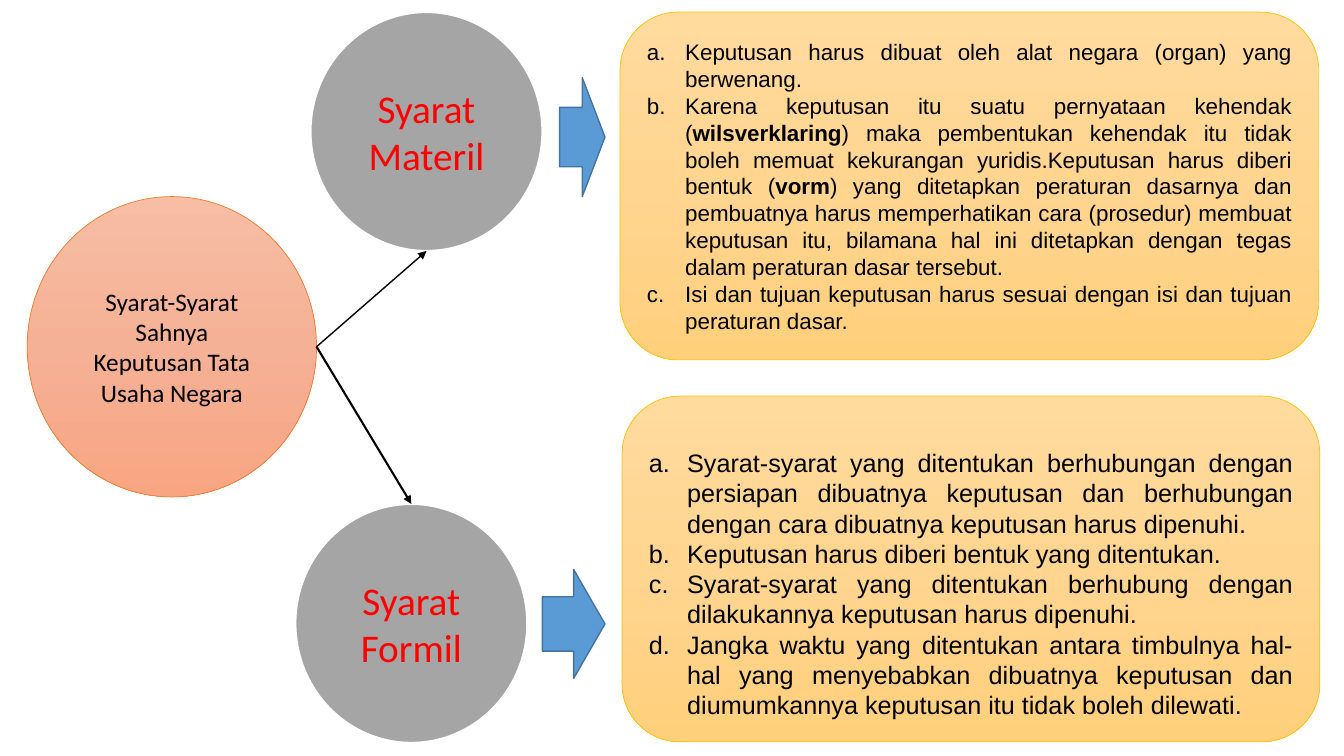
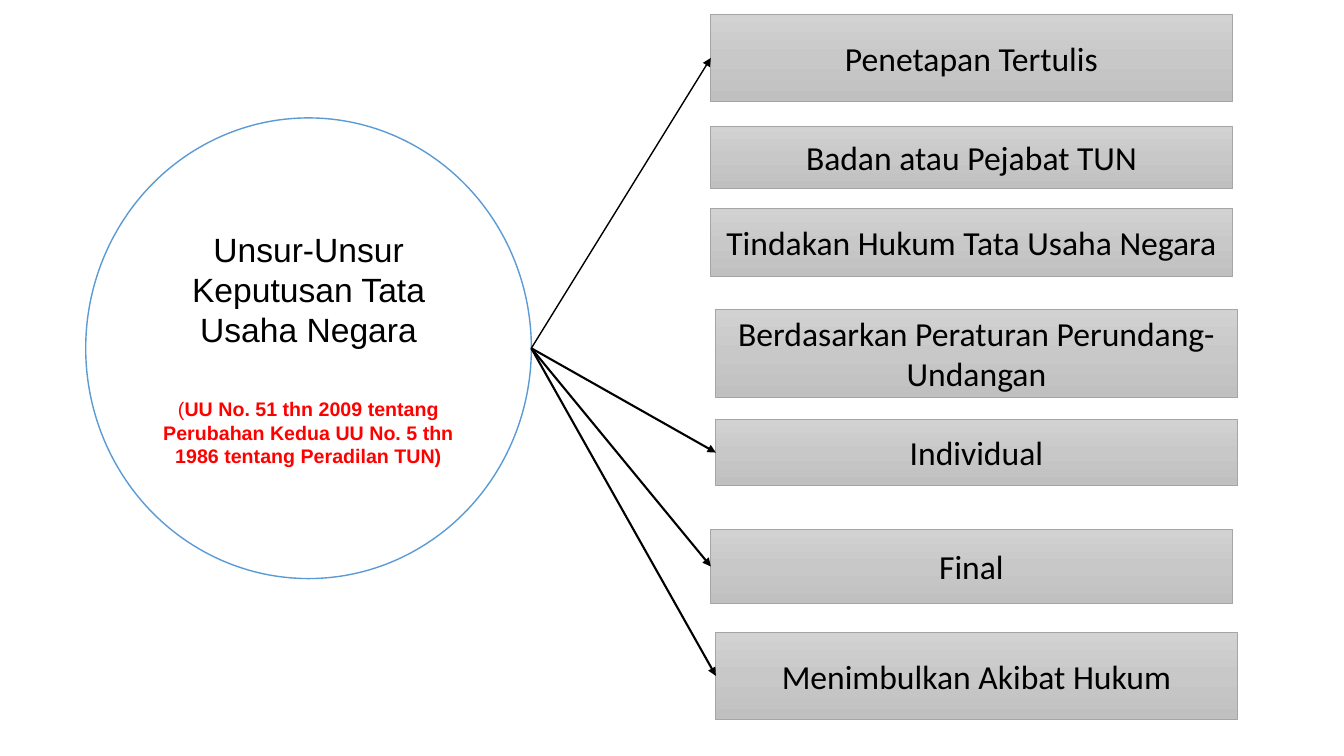
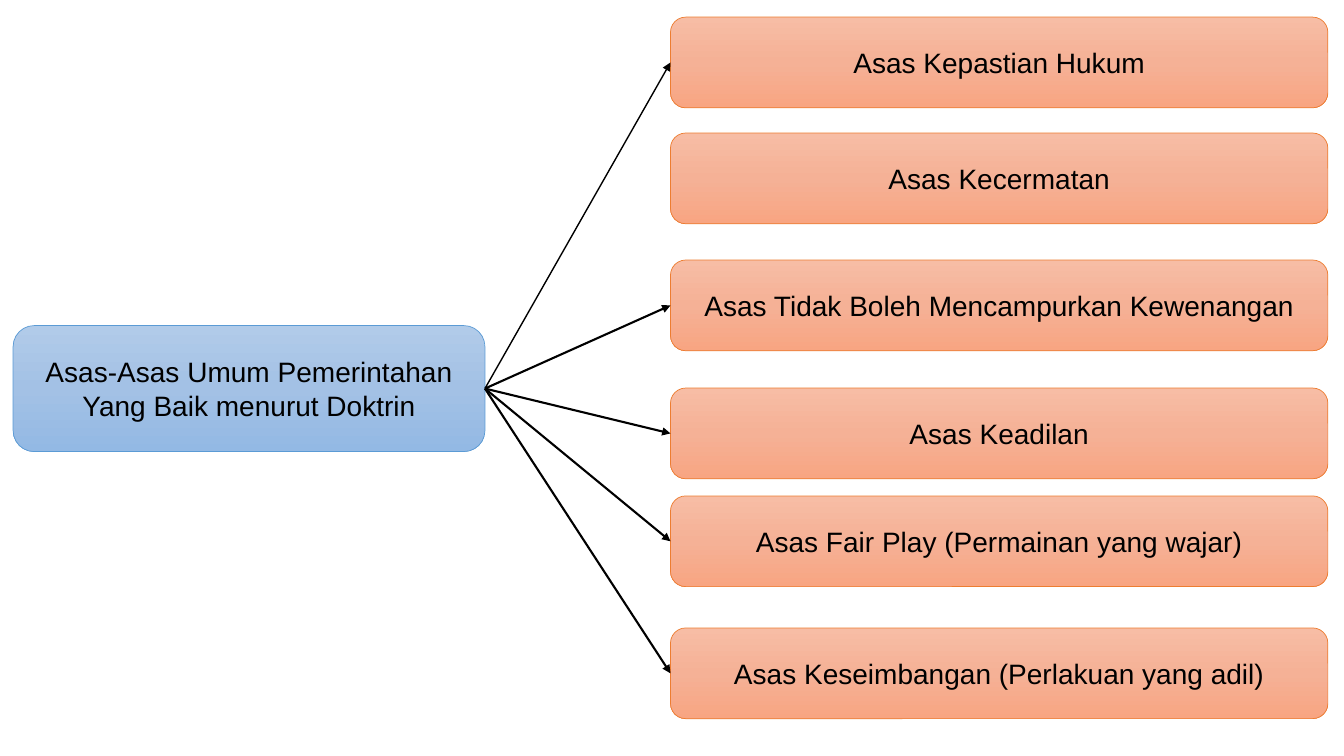
from copy import deepcopy
from dataclasses import dataclass

from pptx import Presentation
from pptx.dml.color import RGBColor
from pptx.enum.shapes import MSO_CONNECTOR, MSO_SHAPE as Preset
from pptx.enum.text import MSO_ANCHOR, PP_ALIGN as Align
from pptx.oxml.ns import qn
from pptx.oxml.xmlchemy import OxmlElement
from pptx.util import Inches, Pt


@dataclass(frozen=True)
class Skin:
    """Fill (one colour, or several for a downward gradient) and outline."""
    fill: tuple
    line: str
    weight: float = 0.5


@dataclass(frozen=True)
class Font:
    name: str
    size: int
    color: str = "000000"


class Theme:
    peach = Skin(("F7BDA5", "F5B196", "F8A582"), "ED7D31")
    gold = Skin(("FFDB9E", "FFD590", "FFD07C"), "FFC000")
    silver = Skin(("D2D2D2", "C8C8C8", "C0C0C0"), "A5A5A5")
    sky = Skin(("B1CBE9", "A3C1E5", "93B9E4"), "5B9BD5")
    gray = Skin(("A5A5A5",), "FFFFFF", 1.5)
    blue = Skin(("5B9BD5",), "43739E", 1)
    outline = Skin(("FFFFFF",), "5B9BD5", 1)

    ink = "000000"
    topic = Font("Calibri", 18)
    branch = Font("Calibri", 28, "FF0000")
    element = Font("Calibri", 24)
    heading = Font("Arial", 24)
    law = Font("Arial", 14, "FF0000")
    principle = Font("Arial", 20)
    material = Font("Arial", 16)
    formal = Font("Arial", 18)

    indent = Inches(0.38)
    thin, thick = Pt(1), Pt(1.5)


LEFT, RIGHT = 1, 3

BRANCHES = [
    dict(label="Syarat Materil", circle=(3.08, 0.12), arrow=(5.55, 0.77, 0.45, 1.18),
         panel=(6.15, 0.12, 6.93, 3.45), font=Theme.material, drop=0, weight=Theme.thin,
         rules=[
             "Keputusan harus dibuat oleh alat negara (organ) yang berwenang.",
             "Karena keputusan itu suatu pernyataan kehendak (*wilsverklaring*) maka "
             "pembentukan kehendak itu tidak boleh memuat kekurangan yuridis.Keputusan "
             "harus diberi bentuk (*vorm*) yang ditetapkan peraturan dasarnya dan "
             "pembuatnya harus memperhatikan cara (prosedur) membuat keputusan itu, "
             "bilamana hal ini ditetapkan dengan tegas dalam peraturan dasar tersebut.",
             "Isi dan tujuan keputusan harus sesuai dengan isi dan tujuan peraturan dasar.",
         ]),
    dict(label="Syarat Formil", circle=(2.93, 5), arrow=(5.38, 5.65, 0.62, 1.08),
         panel=(6.17, 3.93, 6.92, 3.43), font=Theme.formal, drop=0.29, weight=Theme.thick,
         rules=[
             "Syarat-syarat yang ditentukan berhubungan dengan persiapan dibuatnya "
             "keputusan dan berhubungan dengan cara dibuatnya keputusan harus dipenuhi.",
             "Keputusan harus diberi bentuk yang ditentukan.",
             "Syarat-syarat yang ditentukan berhubung dengan dilakukannya keputusan "
             "harus dipenuhi.",
             "Jangka waktu yang ditentukan antara timbulnya hal-hal yang menyebabkan "
             "dibuatnya keputusan dan diumumkannya keputusan itu tidak boleh dilewati.",
         ]),
]

# label, left, top, height, weight of the arrow from the hub (None: no arrow)
ELEMENTS = [
    ("Penetapan Tertulis", 7.05, 0.14, 0.87, Theme.thin),
    ("Badan atau Pejabat TUN", 7.05, 1.25, 0.62, None),
    ("Tindakan Hukum Tata Usaha Negara", 7.05, 2.07, 0.67, None),
    ("Berdasarkan Peraturan Perundang-Undangan", 7.1, 3.07, 0.87, None),
    ("Individual", 7.1, 4.16, 0.66, Theme.thick),
    ("Final", 7.05, 5.25, 0.74, Theme.thick),
    ("Menimbulkan Akibat Hukum", 7.1, 6.27, 0.87, Theme.thick),
]

# label, top, weight of the arrow from the hub
PRINCIPLES = [
    ("Asas Kepastian Hukum", 0.17, Theme.thin),
    ("Asas Kecermatan", 1.32, None),
    ("Asas Tidak Boleh Mencampurkan Kewenangan", 2.58, Theme.thick),
    ("Asas Keadilan", 3.85, Theme.thick),
    ("Asas Fair Play (Permainan yang wajar)", 4.92, Theme.thick),
    ("Asas Keseimbangan (Perlakuan yang adil)", 6.23, Theme.thick),
]


def rgb(value):
    return RGBColor.from_string(value)


def paint(shape, skin):
    shape.shadow.inherit = False
    shape.line.color.rgb = rgb(skin.line)
    shape.line.width = Pt(skin.weight)
    if len(skin.fill) == 1:
        shape.fill.solid()
        shape.fill.fore_color.rgb = rgb(skin.fill[0])
        return
    shape.fill.gradient()
    shape.fill.gradient_angle = 270
    first_stop = next(shape._element.iter(qn("a:gs")))
    first_stop.addnext(deepcopy(first_stop))
    last = len(skin.fill) - 1
    for i, (stop, color) in enumerate(zip(shape.fill.gradient_stops, skin.fill)):
        stop.position = i / last
        stop.color.rgb = rgb(color)


def add_figure(slide, preset, box, skin):
    figure = slide.shapes.add_shape(preset, *map(Inches, box))
    paint(figure, skin)
    frame = figure.text_frame
    frame.word_wrap = True
    frame.vertical_anchor = MSO_ANCHOR.MIDDLE
    return figure


def write(paragraph, text, font, align=Align.CENTER):
    """Fill a paragraph; stretches between asterisks are bold."""
    paragraph.alignment = align
    for i, part in enumerate(text.split("*")):
        if part:
            run = paragraph.add_run()
            run.text = part
            run.font.name = font.name
            run.font.size = Pt(font.size)
            run.font.color.rgb = rgb(font.color)
            run.font.bold = i % 2 == 1


def add_label(slide, preset, box, skin, text, font):
    figure = add_figure(slide, preset, box, skin)
    write(figure.text_frame.paragraphs[0], text, font)
    return figure


def letter(paragraph):
    """Number the paragraph a., b., c. with a hanging indent."""
    props = paragraph._p.get_or_add_pPr()
    props.set("marL", str(Theme.indent))
    props.set("indent", str(-Theme.indent))
    numbering = OxmlElement("a:buAutoNum")
    numbering.set("type", "alphaLcPeriod")
    props.append(numbering)


def add_rules(slide, box, rules, font, drop):
    """Panel with a lettered list, pushed down by drop inches of extra top margin."""
    frame = add_figure(slide, Preset.ROUNDED_RECTANGLE, box, Theme.gold).text_frame
    frame.margin_top += Inches(drop)
    for i, rule in enumerate(rules):
        paragraph = frame.add_paragraph() if i else frame.paragraphs[0]
        write(paragraph, rule, font, Align.JUSTIFY)
        letter(paragraph)


def link(slide, hub, target, weight):
    """Arrow from the hub's right to a box's left, or to the facing edge of a circle."""
    start_x, start_y = hub.left + hub.width, hub.top + hub.height // 2
    end_x = target.left + target.width // 2
    end_y = target.top if target.top > start_y else target.top + target.height
    arrow = slide.shapes.add_connector(MSO_CONNECTOR.STRAIGHT,
                                       start_x, start_y, end_x, end_y)
    if hub.auto_shape_type != Preset.OVAL:
        arrow.begin_connect(hub, RIGHT)
    if target.auto_shape_type != Preset.OVAL:
        arrow.end_connect(target, LEFT)
    arrow.line.color.rgb = rgb(Theme.ink)
    arrow.line.width = weight
    head = OxmlElement("a:tailEnd")
    head.set("type", "triangle")
    arrow.line._get_or_add_ln().append(head)
    arrow._element.spPr.append(OxmlElement("a:effectLst"))


def build_conditions(slide):
    hub = add_label(slide, Preset.OVAL, (0.27, 1.95, 2.87, 2.98), Theme.peach,
                    "Syarat-Syarat Sahnya Keputusan Tata Usaha Negara", Theme.topic)
    for branch in BRANCHES:
        circle = add_label(slide, Preset.OVAL, (*branch["circle"], 2.3, 2.37),
                           Theme.gray, branch["label"], Theme.branch)
        add_rules(slide, branch["panel"], branch["rules"], branch["font"], branch["drop"])
        link(slide, hub, circle, branch["weight"])
        add_figure(slide, Preset.RIGHT_ARROW, branch["arrow"], Theme.blue)


def build_elements(slide):
    hub = add_label(slide, Preset.OVAL, (0.85, 1.17, 4.42, 4.57), Theme.outline,
                    "Unsur-Unsur Keputusan Tata Usaha Negara", Theme.heading)
    law = hub.text_frame.add_paragraph()
    law.space_before = Pt(34)
    write(law, "(*UU No. 51 thn 2009 tentang Perubahan Kedua UU No. 5 thn 1986 "
               "tentang Peradilan TUN)*", Theme.law)
    for label, left, top, height, weight in ELEMENTS:
        element = add_label(slide, Preset.RECTANGLE, (left, top, 5.17, height),
                            Theme.silver, label, Theme.element)
        if weight:
            link(slide, hub, element, weight)


def build_principles(slide):
    hub = add_label(slide, Preset.ROUNDED_RECTANGLE, (0.13, 3.23, 4.68, 1.25), Theme.sky,
                    "Asas-Asas Umum Pemerintahan Yang Baik menurut Doktrin",
                    Theme.principle)
    for label, top, weight in PRINCIPLES:
        principle = add_label(slide, Preset.ROUNDED_RECTANGLE, (6.65, top, 6.52, 0.9),
                              Theme.peach, label, Theme.principle)
        if weight:
            link(slide, hub, principle, weight)


def main():
    deck = Presentation()
    deck.slide_width, deck.slide_height = Inches(13.33), Inches(7.5)
    blank = deck.slide_layouts[6]
    for build in (build_conditions, build_elements, build_principles):
        build(deck.slides.add_slide(blank))
    deck.save("out.pptx")


if __name__ == "__main__":
    main()
